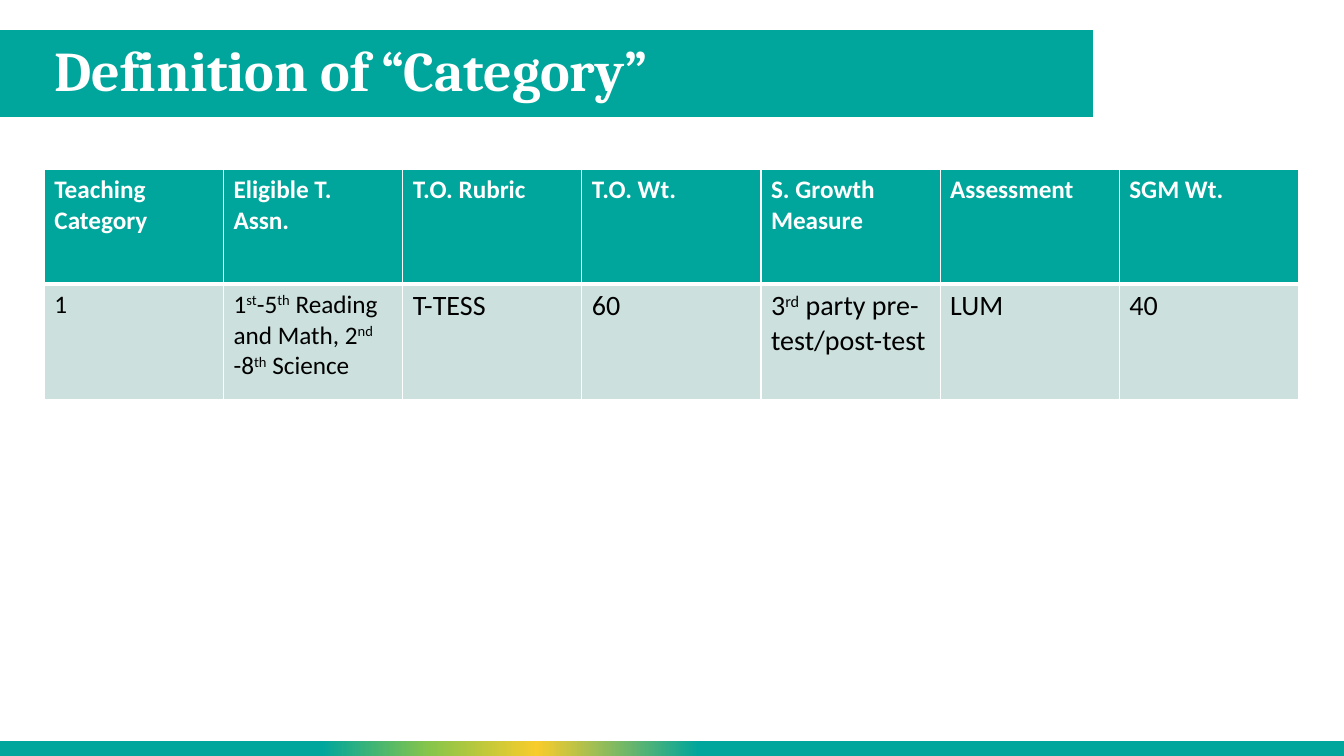
from lxml.etree import SubElement as Sub
from pptx import Presentation
from pptx.dml.color import RGBColor as RGB
from pptx.enum.shapes import MSO_SHAPE as Shape
from pptx.enum.text import MSO_ANCHOR as Anchor, PP_ALIGN as Align
from pptx.oxml import parse_xml
from pptx.oxml.ns import nsdecls, qn
from pptx.util import Inches, Pt

HUES = {"teal": "00A69B", "lime": "87C54A", "gold": "F8CC2B",
        "mint": "CCE1DE", "white": "FFFFFF", "black": "000000"}
STOPS = [(0, "teal"), (24, "teal"), (32, "lime"), (40, "gold"),
         (52, "teal"), (100, "teal")]
HEADS = ["Teaching Category", "Eligible T. Assn.", "T.O. Rubric", "T.O. Wt.",
         "S. Growth Measure", "Assessment", "SGM Wt."]
VALUES = ["1", "1^st^-5^th^ Reading and Math, 2^nd^ -8^th^ Science", "T-TESS",
          "60", "3^rd^ party pre-test/post-test", "LUM", "40"]
SIZES = [18, 18, 20, 20, 20, 20, 20]


def hue(name):
    """Return a named colour."""
    return RGB.from_string(HUES[name])


def style(font, face, size, color, bold):
    """Set the look of a font."""
    font.name, font.size, font.bold = face, Pt(size), bold
    font.color.rgb = hue(color)


def add_bar(slide, box):
    """Add a plain teal bar."""
    bar = slide.shapes.add_shape(Shape.RECTANGLE, *map(Inches, box))
    bar.shadow.inherit = False
    bar.fill.solid()
    bar.fill.fore_color.rgb = hue("teal")
    bar.line.fill.background()
    return bar


def add_title(slide, box, text):
    """Place the title on its bar."""
    left, top, width, height = box
    add_bar(slide, box)
    title = slide.shapes.title
    title.element.getparent().append(title.element)
    title.left, title.top = Inches(left + 0.45), Inches(top)
    title.width, title.height = Inches(width - 0.44), Inches(height)
    frame = title.text_frame
    frame.text = text
    frame.vertical_anchor = Anchor.MIDDLE
    para = frame.paragraphs[0]
    para.alignment, para.line_spacing = Align.LEFT, 0.9
    style(para.font, "Cambria", 40, "white", True)


def add_strip(slide, box):
    """Add the foot strip with its gradient."""
    props = add_bar(slide, box).element.spPr
    stops = "".join(f'<a:gs pos="{pos * 1000}"><a:srgbClr val="{HUES[name]}"/></a:gs>'
                    for pos, name in STOPS)
    grad = parse_xml(f'<a:gradFill {nsdecls("a")} rotWithShape="1"><a:gsLst>{stops}'
                     '</a:gsLst><a:lin ang="0" scaled="0"/></a:gradFill>')
    solid = props.find(qn("a:solidFill"))
    props.replace(solid, grad)


def set_edges(cell, top, bottom):
    """Draw white borders round a cell."""
    props = cell._tc.get_or_add_tcPr()
    widths = {"L": 1, "R": 1, "T": top, "B": bottom}
    for spot, (side, width) in enumerate(widths.items()):
        line = Sub(props, qn("a:ln" + side), w=str(Pt(width)))
        Sub(Sub(line, qn("a:solidFill")), qn("a:srgbClr"), val=HUES["white"])
        props.insert(spot, line)


def fill_cell(cell, text, size, head):
    """Write a cell, raising the parts between carets."""
    cell.fill.solid()
    cell.fill.fore_color.rgb = hue("teal" if head else "mint")
    set_edges(cell, 1 if head else 3, 3 if head else 1)
    para = cell.text_frame.paragraphs[0]
    style(para.font, "Calibri", size, "white" if head else "black", head)
    for spot, part in enumerate(text.split("^")):
        run = para.add_run()
        run.text = part
        style(run.font, "Calibri", size, "white" if head else "black", head)
        if spot % 2:
            run._r.get_or_add_rPr().set("baseline", "30000")


def add_grid(slide, box):
    """Add the category table."""
    left, top, width, height = box
    count = len(HEADS)
    grid = slide.shapes.add_table(2, count, *map(Inches, box)).table
    for col in grid.columns:
        col.width = Inches(width / count)
    for row in grid.rows:
        row.height = Inches(height / 2)
    for spot in range(count):
        fill_cell(grid.cell(0, spot), HEADS[spot], 18, True)
        fill_cell(grid.cell(1, spot), VALUES[spot], SIZES[spot], False)


def main():
    """Build and save the slide."""
    deck = Presentation()
    deck.slide_width, deck.slide_height = Inches(13.33), Inches(7.5)
    slide = deck.slides.add_slide(deck.slide_layouts[5])
    add_strip(slide, (-0.01, 7.35, 13.34, 0.15))
    add_title(slide, (-0.01, 0.3, 10.85, 0.86), "Definition of “Category”")
    add_grid(slide, (0.44, 1.68, 12.44, 2.28))
    deck.save("out.pptx")


if __name__ == "__main__":
    main()
